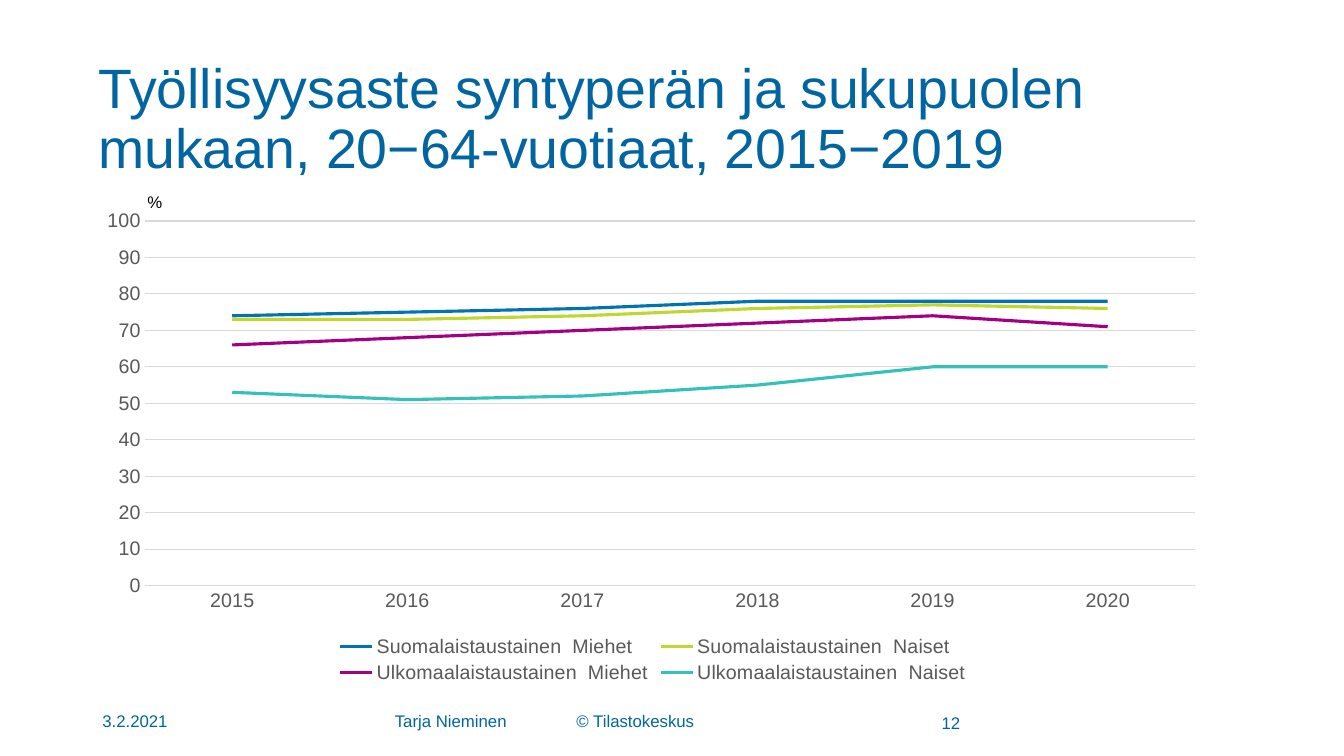
from dataclasses import dataclass

from lxml import etree
from pptx import Presentation
from pptx.chart.data import CategoryChartData as ChartData
from pptx.dml.color import RGBColor as Rgb
from pptx.enum.chart import XL_CHART_TYPE as Kind, XL_LEGEND_POSITION as Place
from pptx.enum.chart import XL_TICK_MARK as Tick
from pptx.enum.text import MSO_ANCHOR as Anchor, PP_ALIGN as Align
from pptx.oxml.ns import qn
from pptx.util import Pt

PX = 9525  # EMU in one px, 96 px to the inch


@dataclass(frozen=True)
class Theme:
    font: str = "Arial"
    brand: str = "0065A1"
    black: str = "000000"
    grey: str = "595959"
    grid: str = "D9D9D9"
    title: float = 39.6
    label: float = 14
    small: float = 12


THEME = Theme()

YEARS = ["2015", "2016", "2017", "2018", "2019", "2020"]
RATES = [
    ("Suomalaistaustainen  Miehet", "0073B0", [74, 75, 76, 78, 78, 78]),
    ("Suomalaistaustainen  Naiset", "C0D730", [73, 73, 74, 76, 77, 76]),
    ("Ulkomaalaistaustainen  Miehet", "A40084", [66, 68, 70, 72, 74, 71]),
    ("Ulkomaalaistaustainen  Naiset", "33C1BA", [53, 51, 52, 55, 60, 60]),
]


def scale(*box):
    return [n * PX for n in box]


def style(font, size, color):
    font.name = THEME.font
    font.size = Pt(size)
    font.color.rgb = Rgb.from_string(color)


def stroke(line, color, width):
    line.color.rgb = Rgb.from_string(color)
    line.width = Pt(width)


def add_text(slide, box, text, color, align=Align.LEFT, anchor=Anchor.MIDDLE):
    shape = slide.shapes.add_textbox(*scale(*box))
    frame = shape.text_frame
    frame.word_wrap = True
    frame.vertical_anchor = anchor
    frame.text = text
    para = frame.paragraphs[0]
    para.alignment = align
    for run in para.runs:
        style(run.font, THEME.small, color)
    return frame


def add_title(slide, box, text):
    shape = slide.shapes.title
    shape.left, shape.top, shape.width, shape.height = scale(*box)
    frame = shape.text_frame
    frame.text = text
    frame.word_wrap = True
    frame.vertical_anchor = Anchor.BOTTOM
    para = frame.paragraphs[0]
    para.alignment = Align.LEFT
    para.line_spacing = 0.9
    style(para.runs[0].font, THEME.title, THEME.brand)


def set_plot(chart, **parts):
    """Fix the inner plot area as shares of the chart."""
    area = chart._chartSpace.chart.plotArea
    for old in area.findall(qn("c:layout")):
        area.remove(old)
    layout = etree.Element(qn("c:layout"))
    area.insert(0, layout)
    manual = etree.SubElement(layout, qn("c:manualLayout"))
    rules = {"layoutTarget": "inner", "xMode": "edge", "yMode": "edge", **parts}
    for name, val in rules.items():
        etree.SubElement(manual, qn(f"c:{name}")).set("val", str(val))


def add_rates(slide, box):
    x, y, w, h = box
    data = ChartData(number_format="0")
    data.categories = YEARS
    for name, _, vals in RATES:
        data.add_series(name, vals)
    chart = slide.shapes.add_chart(Kind.LINE, *scale(*box), data).chart
    chart.has_title = False
    style(chart.font, 10, THEME.black)
    chart.plots[0].vary_by_categories = False
    set_plot(chart, x=0.05, y=0.04, w=0.93, h=0.75)

    # Lines
    for line, (_, color, _) in zip(chart.plots[0].series, RATES):
        line.smooth = False
        stroke(line.format.line, color, 2.25)

    # Axes
    years, rates = chart.category_axis, chart.value_axis
    for axis in (years, rates):
        axis.major_tick_mark = axis.minor_tick_mark = Tick.NONE
        style(axis.tick_labels.font, THEME.label, THEME.grey)
    stroke(years.format.line, THEME.grid, 0.75)
    rates.format.line.fill.background()
    rates.minimum_scale, rates.maximum_scale = 0, 100
    rates.major_unit = 10
    rates.has_major_gridlines = True
    stroke(rates.major_gridlines.format.line, THEME.grid, 0.75)

    # Legend
    chart.has_legend = True
    chart.legend.position = Place.BOTTOM
    chart.legend.include_in_layout = False
    style(chart.legend.font, THEME.label, THEME.grey)

    # Unit above the value axis
    add_text(slide, (x + 47, y - 14, 42, 29), "%", THEME.black, anchor=Anchor.TOP)


def add_footer(slide, box):
    x, y, w, h = box
    add_text(slide, (x, y, 185, h), "3.2.2021", THEME.brand)
    frame = add_text(slide, (x + 186, y, 490, h),
                     "Tarja Nieminen\t© Tilastokeskus", THEME.brand)
    frame.margin_left = 102 * PX
    props = frame.paragraphs[0]._p.get_or_add_pPr()
    tabs = etree.SubElement(props, qn("a:tabLst"))
    etree.SubElement(tabs, qn("a:tab"), pos=str(173 * PX), algn="l")
    add_text(slide, (x + w - 47, y + 2, 47, h), "12", THEME.brand, Align.RIGHT)


def main():
    deck = Presentation()
    deck.slide_width, deck.slide_height = scale(1280, 720)
    slide = deck.slides.add_slide(deck.slide_layouts[5])
    add_title(slide, (84, 38, 1031, 139),
              "Työllisyysaste syntyperän ja sukupuolen mukaan, "
              "20−64-vuotiaat, 2015−2019")
    add_rates(slide, (84, 192, 1076, 463))
    add_footer(slide, (88, 667, 836, 38))
    deck.save("out.pptx")


if __name__ == "__main__":
    main()
